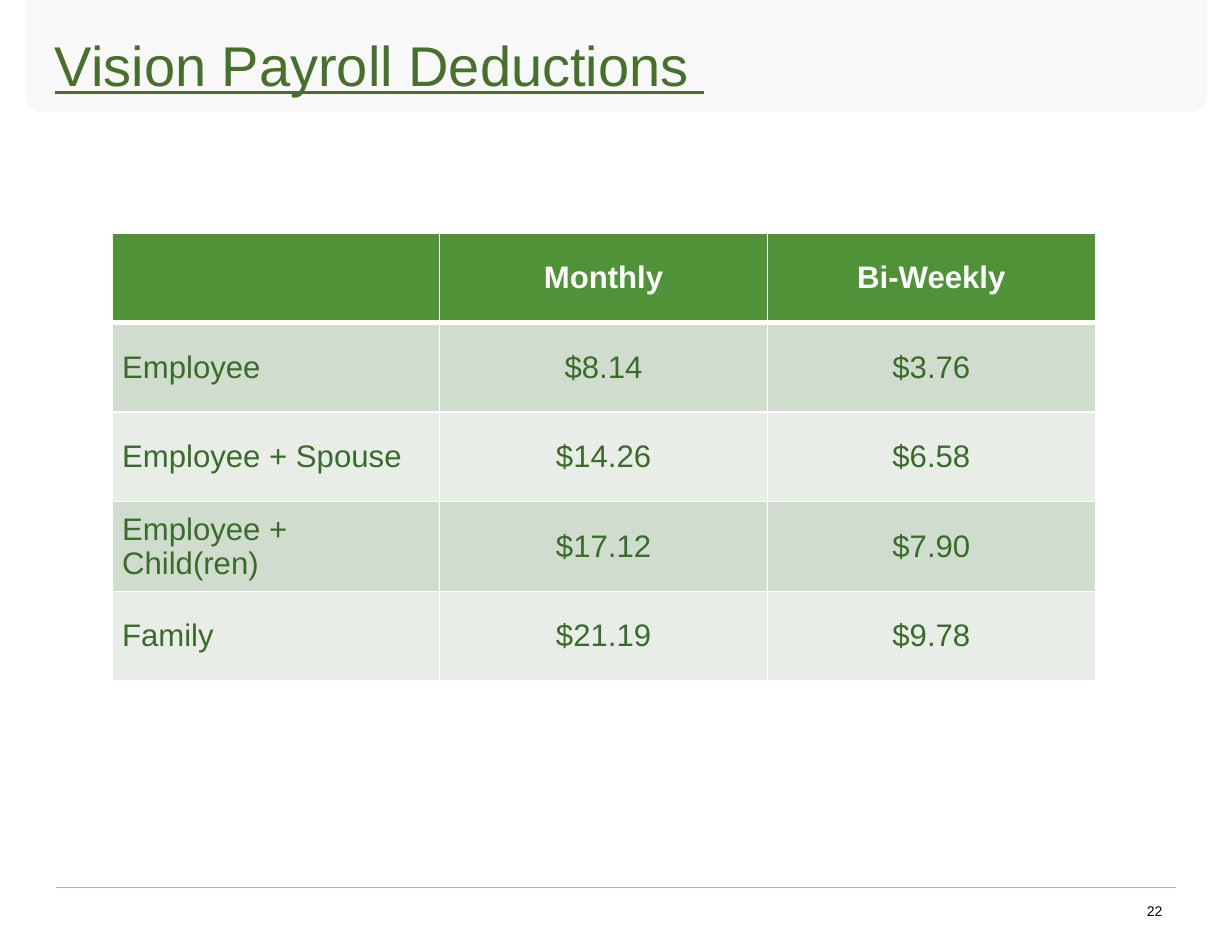
from lxml.etree import SubElement
from pptx import Presentation
from pptx.dml.color import RGBColor
from pptx.enum.shapes import MSO_CONNECTOR, MSO_SHAPE
from pptx.enum.text import MSO_ANCHOR, PP_ALIGN
from pptx.oxml.ns import qn
from pptx.util import Inches, Pt

WHITE = RGBColor(0xFF, 0xFF, 0xFF)
BLACK = RGBColor(0x00, 0x00, 0x00)
BANNER = RGBColor(0xF8, 0xF8, 0xF8)
RULE = RGBColor(0xAA, 0xB4, 0xC1)
TITLE_GREEN = RGBColor(0x46, 0x70, 0x2B)
HEADER_GREEN = RGBColor(0x4F, 0x92, 0x37)
TEXT_GREEN = RGBColor(0x3A, 0x6C, 0x29)
DARK_BAND = RGBColor(0xD0, 0xDC, 0xCE)
LIGHT_BAND = RGBColor(0xE9, 0xED, 0xE8)

DEDUCTIONS = [
    ("", "Monthly", "Bi-Weekly"),
    ("Employee", "$8.14", "$3.76"),
    ("Employee + Spouse", "$14.26", "$6.58"),
    ("Employee + Child(ren)", "$17.12", "$7.90"),
    ("Family", "$21.19", "$9.78"),
]


def write(frame, text, size=20, color=TEXT_GREEN, bold=False, underline=False,
          align=PP_ALIGN.LEFT):
    para = frame.paragraphs[0]
    para.alignment = align
    para.font.size = Pt(size)
    if text:
        span = para.add_run()
        span.text = text
        span.font.name = "Arial"
        span.font.size = Pt(size)
        span.font.bold = bold
        span.font.underline = underline
        span.font.color.rgb = color


class PageBuilder:
    def __init__(self, page):
        self.page = page

    def banner(self, left, top, width, height, radius):
        shape = self.page.shapes.add_shape(
            MSO_SHAPE.ROUND_2_SAME_RECTANGLE,
            Inches(left), Inches(top), Inches(width), Inches(height))
        shape.adjustments[0] = 0
        shape.adjustments[1] = radius / height
        shape.shadow.inherit = False
        shape.fill.solid()
        shape.fill.fore_color.rgb = BANNER
        shape.line.fill.background()

    def rule(self, left, right, top):
        line = self.page.shapes.add_connector(
            MSO_CONNECTOR.STRAIGHT,
            Inches(left), Inches(top), Inches(right), Inches(top))
        line.line.color.rgb = RULE
        line.line.width = Pt(0.25)
        SubElement(line._element.spPr, qn("a:effectLst"))

    def text(self, left, top, width, height, text, **style):
        box = self.page.shapes.add_textbox(
            Inches(left), Inches(top), Inches(width), Inches(height))
        frame = box.text_frame
        frame.word_wrap = True
        frame.margin_left = frame.margin_right = 0
        frame.margin_top = frame.margin_bottom = 0
        write(frame, text, **style)

    def border(self, cell, side, width):
        properties = cell._tc.get_or_add_tcPr()
        line = SubElement(properties, qn(f"a:ln{side}"), w=str(Pt(width)))
        fill = SubElement(line, qn("a:solidFill"))
        SubElement(fill, qn("a:srgbClr"), val=str(WHITE))

    def table(self, left, top, width, height, rows):
        table = self.page.shapes.add_table(
            len(rows), len(rows[0]),
            Inches(left), Inches(top), Inches(width), Inches(height)).table
        for row, values in enumerate(rows):
            header = row == 0
            band = DARK_BAND if row % 2 else LIGHT_BAND
            widths = {"L": 1, "R": 1, "T": 3 if row == 1 else 1, "B": 3 if header else 1}
            for column, value in enumerate(values):
                cell = table.cell(row, column)
                cell.vertical_anchor = MSO_ANCHOR.MIDDLE
                cell.margin_top = cell.margin_bottom = 0
                cell.margin_left = Inches(0 if column else 0.09)
                cell.margin_right = Inches(0 if column else 0.15)
                for side, thickness in widths.items():
                    self.border(cell, side, thickness)
                cell.fill.solid()
                cell.fill.fore_color.rgb = HEADER_GREEN if header else band
                write(cell.text_frame, value, bold=header,
                      color=WHITE if header else TEXT_GREEN,
                      align=PP_ALIGN.CENTER if column else PP_ALIGN.LEFT)


def main():
    deck = Presentation()
    deck.slide_width = Inches(11)
    deck.slide_height = Inches(8.5)
    builder = PageBuilder(deck.slides.add_slide(deck.slide_layouts[6]))
    builder.banner(0.23, 0, 10.55, 1, radius=0.16)
    builder.rule(0.5, 10.5, 7.92)
    builder.text(0.49, 0.27, 10.03, 0.61, "Vision Payroll Deductions ",
                 size=36, color=TITLE_GREEN, underline=True)
    builder.text(10.24, 8.06, 0.2, 0.16, "22", size=9, color=BLACK)
    builder.table(1, 2.08, 8.78, 4, DEDUCTIONS)
    deck.save("out.pptx")


if __name__ == "__main__":
    main()
